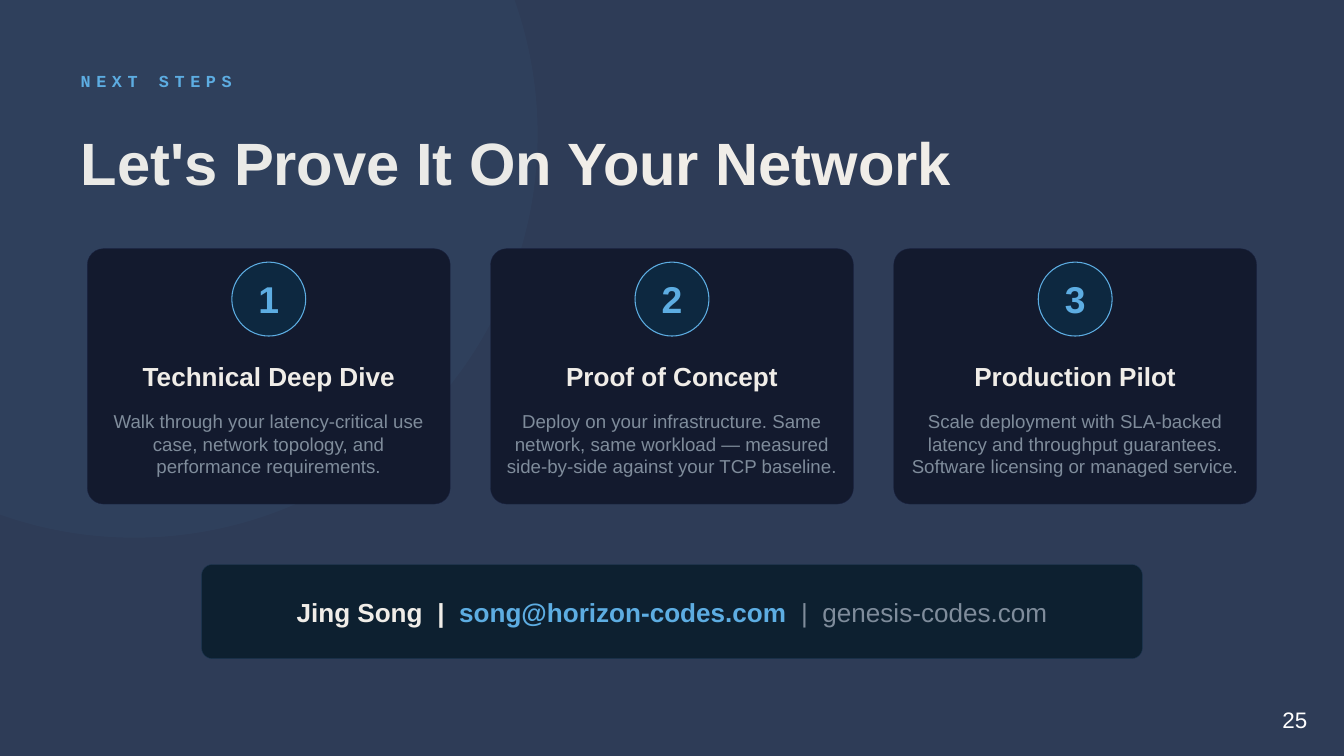
from pptx import Presentation
from pptx import util as u
from pptx.dml.color import RGBColor
from pptx.enum import shapes, text
from pptx.oxml.ns import qn
from lxml import etree

W, H = 26.67, 15
UNIT = W / 200  # the slide is a grid of 200 columns with square cells
C = dict(bg="2E3C57", sky="5DADE2", cream="F0EDE8", grey="7F8C9B", white="FFFFFF",
         card="131A2E", card_line="1A2240", badge="0D2840",
         contact="0D2030", contact_line="1A3550")
STEPS = [
    ("Technical Deep Dive",
     "Walk through your latency-critical use case, network topology, "
     "and performance requirements."),
    ("Proof of Concept",
     "Deploy on your infrastructure. Same network, same workload — "
     "measured side-by-side against your TCP baseline."),
    ("Production Pilot",
     "Scale deployment with SLA-backed latency and throughput guarantees. "
     "Software licensing or managed service."),
]
LEFT, CENTER = text.PP_ALIGN.LEFT, text.PP_ALIGN.CENTER
OVAL, ROUND = shapes.MSO_SHAPE.OVAL, shapes.MSO_SHAPE.ROUNDED_RECTANGLE


def grid(*cells):
    return [u.Inches(n * UNIT) for n in cells]


def rgb(name):
    return RGBColor.from_string(C[name])


def add_shape(s, kind, box, fill, line=None, width=0.5, radius=None, alpha=None):
    sp = s.shapes.add_shape(kind, *grid(*box))
    sp.shadow.inherit = False
    sp.fill.solid()
    sp.fill.fore_color.rgb = rgb(fill)
    if alpha:
        color = sp.fill._xPr.find(".//" + qn("a:srgbClr"))
        etree.SubElement(color, qn("a:alpha")).set("val", str(alpha * 1000))
    if line:
        sp.line.color.rgb = rgb(line)
        sp.line.width = u.Pt(width)
    else:
        sp.line.fill.background()
    if radius:
        sp.adjustments[0] = radius / min(box[2:])
    return sp


def write(sp, runs, size, align=LEFT, bold=False, font="Arial"):
    """Each run is (words, colour), with optional bold and letter spacing."""
    tf = sp.text_frame
    tf.word_wrap = True
    tf.auto_size = text.MSO_AUTO_SIZE.NONE
    tf.vertical_anchor = text.MSO_ANCHOR.MIDDLE
    tf.margin_left = tf.margin_right = tf.margin_top = tf.margin_bottom = 0
    p = tf.paragraphs[0]
    p.alignment = align
    for words, color, *extra in runs:
        r = p.add_run()
        r.text = words
        r.font.name, r.font.size = font, u.Pt(size)
        r.font.bold = extra[0] if extra else bold
        r.font.color.rgb = rgb(color)
        if len(extra) > 1:
            r._r.get_or_add_rPr().set("spc", str(round(extra[1] * 100)))


def add_text(s, box, runs, size, **style):
    write(s.shapes.add_textbox(*grid(*box)), runs, size, **style)


def heading(s, x, y, w):
    add_text(s, (x, y, 100, 6), [("NEXT STEPS", "sky", True, 8)], 24,
             font="Courier New")
    title = s.shapes.title
    title.left, title.top, title.width, title.height = grid(x, y + 9, w, 12)
    write(title, [("Let's Prove It On Your Network", "cream")], 85.3, bold=True)


def step_card(s, box, number, name, detail):
    x, y, w, h = box
    add_shape(s, ROUND, box, "card", "card_line", radius=2.4)
    # Numbered badge
    d = 11
    badge = add_shape(s, OVAL, (x + (w - d) / 2, y + 2, d, d), "badge", "sky", 1.5)
    write(badge, [(str(number), "sky")], 53.3, align=CENTER, bold=True)
    # Name and detail
    add_text(s, (x + 3, y + 16, w - 6, 6), [(name, "cream")], 37.3,
             align=CENTER, bold=True)
    add_text(s, (x + 2, y + 23, w - 4, 12), [(detail, "grey")], 26.7, align=CENTER)


def contact_bar(s, box):
    bar = add_shape(s, ROUND, box, "contact", "contact_line", radius=1.6)
    gap = 10.4  # widens the space on both sides of a divider
    write(bar, [("Jing Song", "cream", True), (" |", "cream", True, gap),
                (" song@horizon-codes.com", "sky", True),
                (" |", "grey", False, gap), (" genesis-codes.com", "grey")],
          37.3, align=CENTER)


def main():
    prs = Presentation()
    prs.slide_width, prs.slide_height = u.Inches(W), u.Inches(H)
    s = prs.slides.add_slide(prs.slide_layouts[5])
    s.background.fill.solid()
    s.background.fill.fore_color.rgb = rgb("bg")

    # Soft glow in the corner
    add_shape(s, OVAL, (-40, -40, 120, 120), "sky", alpha=4)
    heading(s, 12, 9, 160)

    # Three steps
    for i, (name, detail) in enumerate(STEPS):
        step_card(s, (13 + 60 * i, 37, 54, 38), i + 1, name, detail)

    contact_bar(s, (30, 84, 140, 14))

    # Page number
    add_text(s, (189.2, 104, 7, 6), [("25", "white")], 32, align=CENTER)
    prs.save("out.pptx")


if __name__ == "__main__":
    main()
